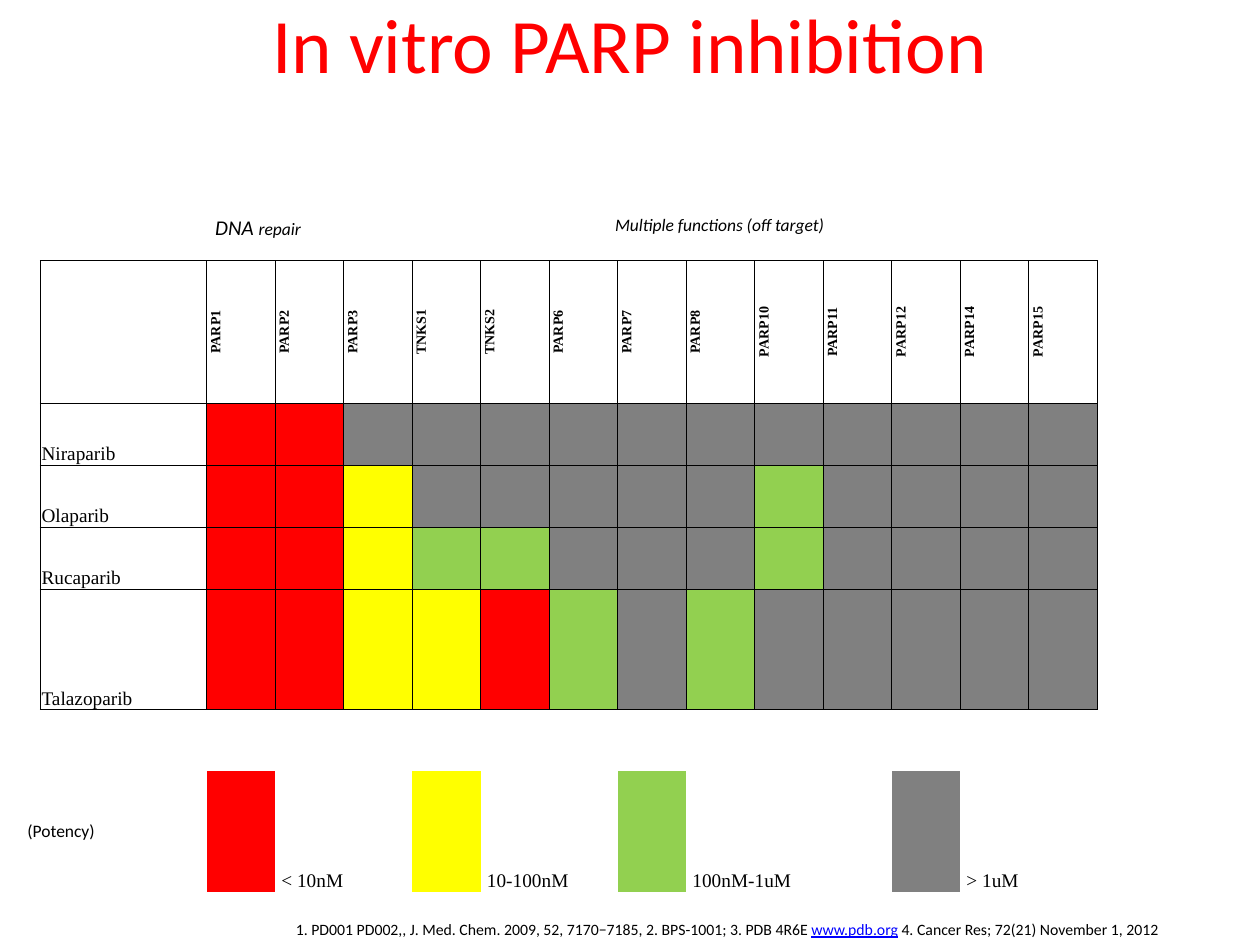
import dataclasses

import pptx
import pptx.dml.color
import pptx.enum.text
import pptx.oxml
import pptx.oxml.ns
import pptx.util

Anchor = pptx.enum.text.MSO_ANCHOR
Align = pptx.enum.text.PP_ALIGN

# The slide is a grid of 100 columns by 75 rows.
UNIT = pptx.util.Inches(0.1)
COLUMNS, ROWS = 100, 75
NO_GRID_STYLE = "{2D5ABB26-0587-4C30-8999-92F81FD0307C}"


@dataclasses.dataclass(frozen=True)
class Theme:
    sans: str = "Calibri"
    serif: str = "Times New Roman"
    black: str = "000000"
    title: str = "FF0000"
    link: str = "0000FF"
    potency: tuple = (("R", "FF0000"), ("Y", "FFFF00"), ("G", "92D050"), ("N", "808080"))
    title_size: float = 44
    group_size: float = 12
    label_size: float = 10
    note_size: float = 9
    header_size: float = 8
    row_size: float = 11
    border: float = 0.5


THEME = Theme()
POTENCY_COLOURS = dict(THEME.potency)

ENZYMES = ("PARP1 PARP2 PARP3 TNKS1 TNKS2 PARP6 PARP7 PARP8 "
           "PARP10 PARP11 PARP12 PARP14 PARP15").split()
# One letter per enzyme, keyed to Theme.potency.
INHIBITORS = {
    "Niraparib": "RRNNNNNNNNNNN",
    "Olaparib": "RRYNNNNNGNNNN",
    "Rucaparib": "RRYGGNNNGNNNN",
    "Talazoparib": "RRYYRGNGNNNNN",
}
# Swatch column, last column of its label, potency letter, label.
LEGEND = (
    (1, 3, "R", "< 10nM"),
    (4, 6, "Y", "10-100nM"),
    (7, 10, "G", "100nM-1uM"),
    (11, 13, "N", "> 1uM"),
)
ROW_HEIGHTS = (11.3, 4.92, 4.92, 4.92, 9.55, 4.92, 9.55)
NAME_COLUMN = 13.2


@dataclasses.dataclass(frozen=True)
class Box:
    """A rectangle in grid units."""
    left: float
    top: float
    width: float
    height: float

    def inner(self, left, top, width, height):
        """A box placed by offsets from this one's top left corner."""
        return Box(self.left + left, self.top + top, width, height)

    def lengths(self):
        return [round(value * UNIT) for value in dataclasses.astuple(self)]


def add_run(paragraph, text, size, font=THEME.sans, colour=THEME.black, **style):
    run = paragraph.add_run()
    run.text = text
    run.font.name = font
    run.font.size = pptx.util.Pt(size)
    run.font.color.rgb = pptx.dml.color.RGBColor.from_string(colour)
    for name, value in style.items():
        setattr(run.font, name, value)


def add_text(slide, box, anchor=Anchor.TOP, align=Align.LEFT):
    """Add an empty text box and return its paragraph."""
    frame = slide.shapes.add_textbox(*box.lengths()).text_frame
    frame.word_wrap = True
    frame.vertical_anchor = anchor
    paragraph = frame.paragraphs[0]
    paragraph.alignment = align
    return paragraph


def add_title(slide, box):
    paragraph = add_text(slide, box, Anchor.MIDDLE, Align.CENTER)
    add_run(paragraph, "In vitro PARP inhibition", THEME.title_size, colour=THEME.title)


def add_references(slide, box):
    paragraph = add_text(slide, box, Anchor.BOTTOM)
    add_run(paragraph, "1. PD001 PD002,, J. Med. Chem. 2009, 52, 7170−7185, "
            "2. BPS-1001; 3. PDB 4R6E ", THEME.note_size)
    add_run(paragraph, "www.pdb.org", THEME.note_size, colour=THEME.link, underline=True)
    add_run(paragraph, " 4. Cancer Res; 72(21) November 1, 2012", THEME.note_size)


def add_table_labels(slide, box):
    """Add the enzyme group names above the table and the legend's name beside it."""
    repair = add_text(slide, box.inner(12.9, -4.2, 11, 3))
    add_run(repair, "DNA ", THEME.group_size, italic=True)
    add_run(repair, "repair", THEME.label_size, italic=True)
    off_target = add_text(slide, box.inner(24, -4.2, 59.8, 2.7), align=Align.CENTER)
    add_run(off_target, "Multiple functions (off target)", THEME.label_size, italic=True)
    potency = add_text(slide, box.inner(-2, 43.9, 8, 2.7))
    add_run(potency, "(Potency)", THEME.label_size)


def add_borders(cell):
    properties = cell._tc.get_or_add_tcPr()
    width = pptx.util.Pt(THEME.border)
    for side in ("lnL", "lnR", "lnT", "lnB"):
        properties.append(pptx.oxml.parse_xml(
            f'<a:{side} {pptx.oxml.ns.nsdecls("a")} w="{width}"><a:solidFill>'
            f'<a:srgbClr val="{THEME.black}"/></a:solidFill></a:{side}>'))


def fill_cell(cell, letter):
    cell.fill.solid()
    cell.fill.fore_color.rgb = pptx.dml.color.RGBColor.from_string(POTENCY_COLOURS[letter])


def write_cell(cell, text, size=THEME.row_size, indent=0.01, align=Align.LEFT, bold=False):
    cell.vertical_anchor = Anchor.BOTTOM
    cell.margin_left = pptx.util.Inches(indent)
    cell.margin_top = cell.margin_right = pptx.util.Inches(0.01)
    cell.margin_bottom = 0
    paragraph = cell.text_frame.paragraphs[0]
    paragraph.alignment = align
    add_run(paragraph, text, size, THEME.serif, bold=bold)


def fill_header(table):
    for column, enzyme in enumerate(ENZYMES, start=1):
        cell = table.cell(0, column)
        cell._tc.get_or_add_tcPr().set("vert", "vert270")
        write_cell(cell, enzyme, THEME.header_size, align=Align.CENTER, bold=True)


def fill_potencies(table):
    for row, (inhibitor, letters) in enumerate(INHIBITORS.items(), start=1):
        write_cell(table.cell(row, 0), inhibitor)
        for column, letter in enumerate(letters, start=1):
            fill_cell(table.cell(row, column), letter)


def fill_legend(table):
    row = len(ROW_HEIGHTS) - 1
    for swatch, last, letter, label in LEGEND:
        fill_cell(table.cell(row, swatch), letter)
        label_cell = table.cell(row, swatch + 1)
        label_cell.merge(table.cell(row, last))
        write_cell(label_cell, label, indent=0.05)


def add_potency_table(slide, box):
    """Add the heat map, with its legend in the last row."""
    frame = slide.shapes.add_table(len(ROW_HEIGHTS), len(ENZYMES) + 1, *box.lengths())
    table = frame.table
    table.first_row = table.horz_banding = False
    table._tbl.tblPr.find(pptx.oxml.ns.qn("a:tableStyleId")).text = NO_GRID_STYLE
    enzyme_width = (box.width - NAME_COLUMN) / len(ENZYMES)
    for index, column in enumerate(table.columns):
        column.width = round((enzyme_width if index else NAME_COLUMN) * UNIT)
    for row, height in zip(table.rows, ROW_HEIGHTS):
        row.height = round(height * UNIT)
    for row in range(len(table.rows)):
        for column in range(len(table.columns)):
            cell = table.cell(row, column)
            if row <= len(INHIBITORS):
                add_borders(cell)
            cell.fill.background()
    fill_header(table)
    fill_potencies(table)
    fill_legend(table)


def main():
    presentation = pptx.Presentation()
    presentation.slide_width = COLUMNS * UNIT
    presentation.slide_height = ROWS * UNIT
    slide = presentation.slides.add_slide(presentation.slide_layouts[6])
    table_box = Box(3.2, 20.7, 83.9, sum(ROW_HEIGHTS))
    add_references(slide, Box(22.5, 69.5, 74.7, 5.5))
    add_title(slide, Box(0, -1.1, COLUMNS, 8.9))
    add_potency_table(slide, table_box)
    add_table_labels(slide, table_box)
    presentation.save("out.pptx")


if __name__ == "__main__":
    main()
